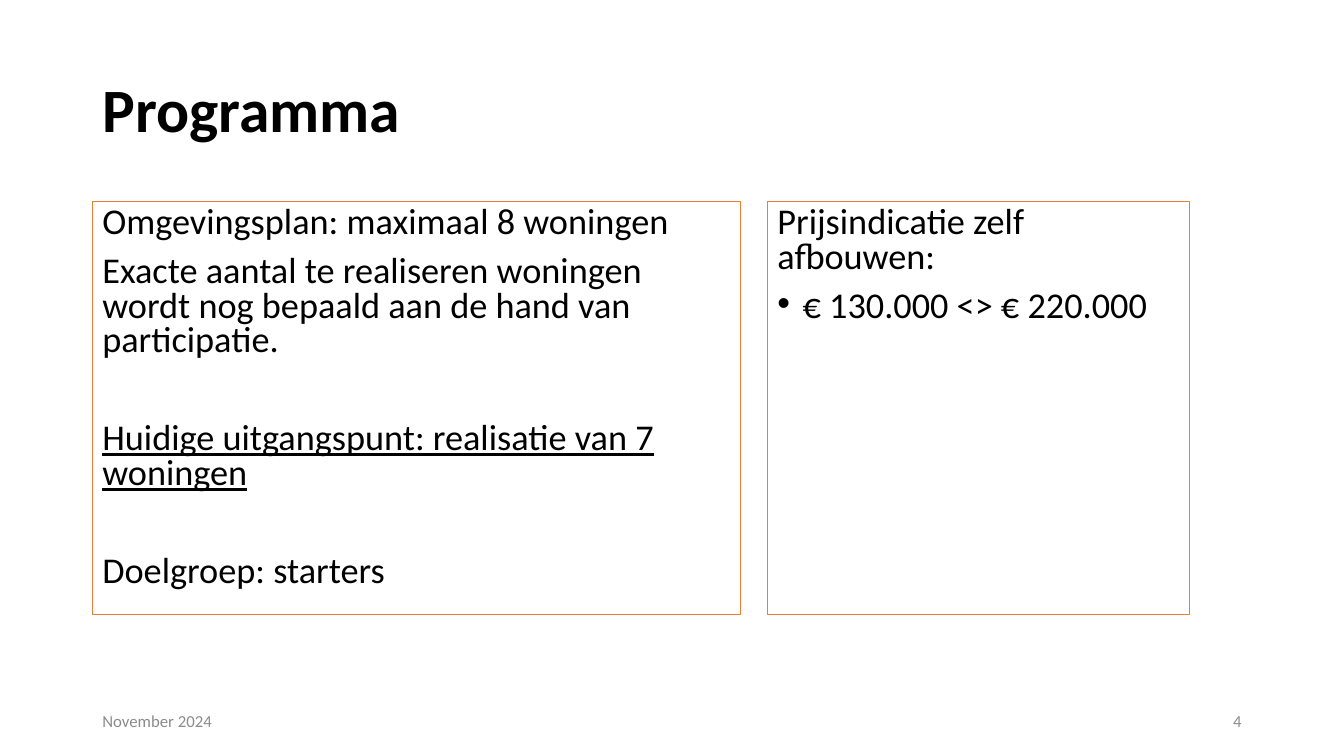
from dataclasses import dataclass

from lxml.etree import SubElement
from pptx import Presentation
from pptx.dml.color import RGBColor
from pptx.enum.text import MSO_ANCHOR as Anchor, PP_ALIGN as Align
from pptx.oxml.ns import qn
from pptx.util import Emu, Pt

EMU_PER_PX = 9525
TITLE_ONLY = 5


@dataclass(frozen=True)
class Theme:
    font: str = "Calibri"
    ink: str = "000000"
    muted: str = "8C8C8C"
    border: str = "ED7D31"
    border_width: float = 0.75
    title_size: float = 44
    body_size: float = 25.9
    footer_size: float = 12
    paragraph_gap: float = 10
    section_gap: float = 45
    indent: int = 24


THEME = Theme()


def px(count):
    return Emu(count * EMU_PER_PX)


def add_bullet(para):
    properties = para._p.get_or_add_pPr()
    properties.set("marL", str(px(THEME.indent)))
    properties.set("indent", str(-px(THEME.indent)))
    SubElement(properties, qn("a:buFont")).set("typeface", "Arial")
    SubElement(properties, qn("a:buChar")).set("char", "•")


def write(para, text, size=THEME.body_size, color=THEME.ink, bold=False,
          underline=False, bullet=False, align=Align.LEFT, spacing=1.0, before=0):
    if bullet:
        add_bullet(para)
    para.alignment = align
    para.line_spacing = spacing
    para.space_before = Pt(before)
    span = para.add_run()
    span.text = text
    font = span.font
    font.name, font.size = THEME.font, Pt(size)
    font.bold, font.underline = bold, underline
    font.color.rgb = RGBColor.from_string(color)


def add_title(page, text, left, top, width, height):
    title = page.shapes.title
    title.left, title.top = px(left), px(top)
    title.width, title.height = px(width), px(height)
    title.text_frame.vertical_anchor = Anchor.MIDDLE
    write(title.text_frame.paragraphs[0], text, size=THEME.title_size,
          bold=True, spacing=0.9)


def add_text_box(page, left, top, width, height, anchor):
    box = page.shapes.add_textbox(px(left), px(top), px(width), px(height))
    box.text_frame.word_wrap = True
    box.text_frame.vertical_anchor = anchor
    return box


def add_panel(page, left, width, entries):
    box = add_text_box(page, left, 192, width, 393, Anchor.TOP)
    box.line.color.rgb = RGBColor.from_string(THEME.border)
    box.line.width = Pt(THEME.border_width)
    frame = box.text_frame
    for index, (text, options) in enumerate(entries):
        para = frame.add_paragraph() if index else frame.paragraphs[0]
        write(para, text, spacing=0.8, **options)


def add_footer(page, text, left, align):
    box = add_text_box(page, left, 667, 288, 38, Anchor.MIDDLE)
    write(box.text_frame.paragraphs[0], text, size=THEME.footer_size,
          color=THEME.muted, align=align)


def main():
    deck = Presentation()
    deck.slide_width, deck.slide_height = px(1280), px(720)
    page = deck.slides.add_slide(deck.slide_layouts[TITLE_ONLY])

    add_title(page, "Programma", 88, 38, 1104, 139)
    follow = {"before": THEME.paragraph_gap}
    section = {"before": THEME.section_gap}
    add_panel(page, 88, 617, [
        ("Omgevingsplan: maximaal 8 woningen", {}),
        ("Exacte aantal te realiseren woningen wordt nog bepaald "
         "aan de hand van participatie.", follow),
        ("Huidige uitgangspunt: realisatie van 7 woningen",
         {**section, "underline": True}),
        ("Doelgroep: starters", section),
    ])
    add_panel(page, 731, 402, [
        ("Prijsindicatie zelf afbouwen:", {}),
        ("€ 130.000 <> € 220.000", {**follow, "bullet": True}),
    ])
    add_footer(page, "November 2024", 88, Align.LEFT)
    add_footer(page, "4", 904, Align.RIGHT)

    deck.save("out.pptx")


if __name__ == "__main__":
    main()
